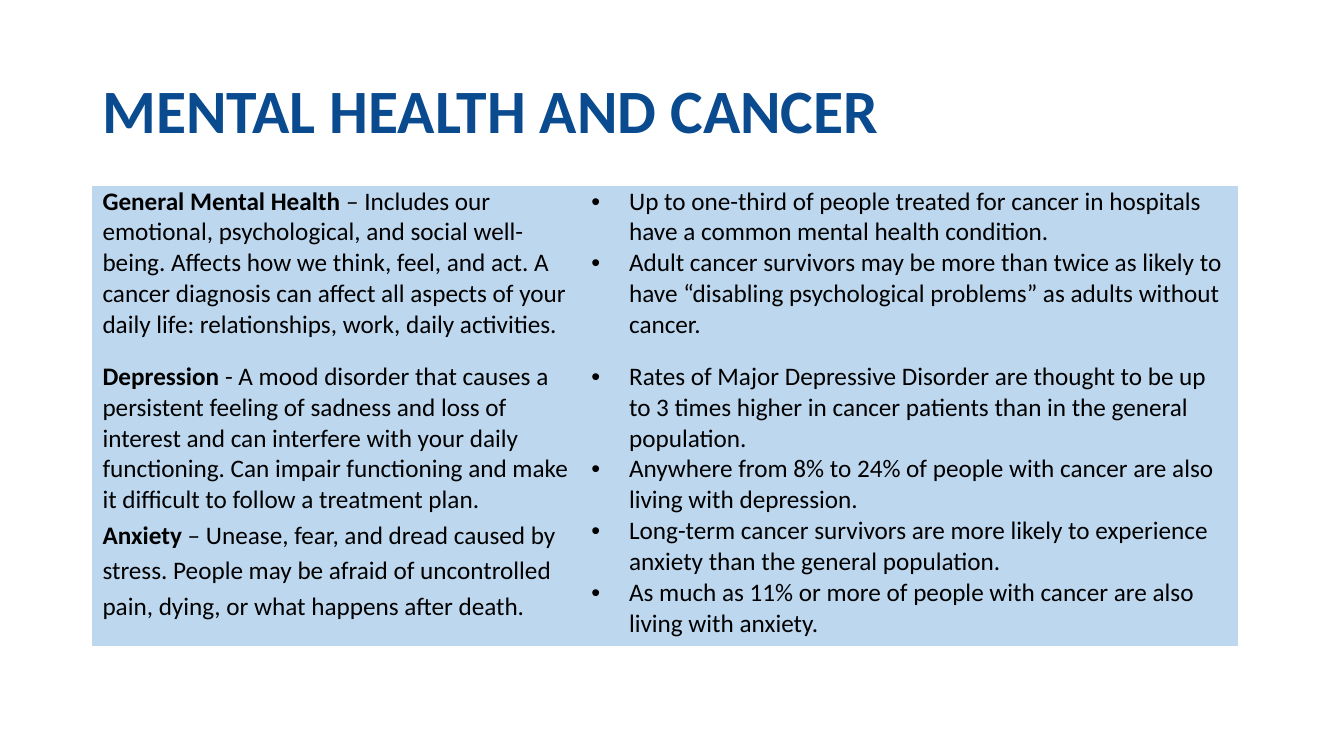
from dataclasses import dataclass

from lxml.etree import SubElement
from pptx import Presentation
from pptx.dml.color import RGBColor
from pptx.enum.text import MSO_ANCHOR, PP_ALIGN
from pptx.oxml.ns import qn
from pptx.util import Cm, Pt

TITLE = "MENTAL HEALTH AND CANCER"

# (term, definition, definition line spacing, facts)
TOPICS = [
    ("General Mental Health ",
     "– Includes our emotional, psychological, and social well-being. Affects how we "
     "think, feel, and act. A cancer diagnosis can affect all aspects of your daily life: "
     "relationships, work, daily activities.",
     1.0,
     ["Up to one-third of people treated for cancer in hospitals have a common mental "
      "health condition.",
      "Adult cancer survivors may be more than twice as likely to have “disabling "
      "psychological problems” as adults without cancer."]),
    ("Depression",
     " - A mood disorder that causes a persistent feeling of sadness and loss of interest "
     "and can interfere with your daily functioning. Can impair functioning and make it "
     "difficult to follow a treatment plan.",
     1.0,
     ["Rates of Major Depressive Disorder are thought to be up to 3 times higher in cancer "
      "patients than in the general population.",
      "Anywhere from 8% to 24% of people with cancer are also living with depression."]),
    ("Anxiety",
     " – Unease, fear, and dread caused by stress. People may be afraid of uncontrolled "
     "pain, dying, or what happens after death.",
     1.15,
     ["Long-term cancer survivors are more likely to experience anxiety than the general "
      "population.",
      "As much as 11% or more of people with cancer are also living with anxiety."]),
]


@dataclass(frozen=True)
class Theme:
    font: str = "Calibri"
    title_size: Pt = Pt(44)
    body_size: Pt = Pt(18)
    title_color: RGBColor = RGBColor(0x0A, 0x4A, 0x8E)
    text_color: RGBColor = RGBColor(0, 0, 0)
    cell_fill: RGBColor = RGBColor(0xBD, 0xD7, 0xEE)


THEME = Theme()
PLAIN_TABLE_STYLE = "{2D5ABB26-0587-4C30-8999-92F81FD0307C}"
LEFT, TITLE_TOP, TABLE_TOP = Cm(2.33), Cm(1.01), Cm(4.69)
TITLE_WIDTH, TITLE_HEIGHT = Cm(29.21), Cm(3.68)
COLUMN_WIDTHS = [Cm(12.32), Cm(16.54)]
ROW_HEIGHTS = [Cm(4.42), Cm(3.89), Cm(3.28)]
BULLET_INDENT = Cm(0.95)


def style_font(font, size, color, bold=False):
    font.name = THEME.font
    font.size = size
    font.bold = bold
    font.color.rgb = color


def add_bullet(p):
    pPr = p._p.get_or_add_pPr()
    pPr.set("marL", str(BULLET_INDENT))
    pPr.set("indent", str(-BULLET_INDENT))
    SubElement(pPr, qn("a:buFont"), typeface="Arial")
    SubElement(pPr, qn("a:buChar"), char="•")


def add_title(slide):
    title = slide.shapes.title
    title.left, title.top = LEFT, TITLE_TOP
    title.width, title.height = TITLE_WIDTH, TITLE_HEIGHT
    tf = title.text_frame
    tf.text = TITLE
    tf.vertical_anchor = MSO_ANCHOR.MIDDLE
    p = tf.paragraphs[0]
    p.alignment = PP_ALIGN.LEFT
    p.line_spacing = 0.9
    style_font(p.runs[0].font, THEME.title_size, THEME.title_color, bold=True)


def fill_definition(cell, term, definition, line_spacing):
    p = cell.text_frame.paragraphs[0]
    p.line_spacing = line_spacing
    for text, bold in ((term, True), (definition, False)):
        r = p.add_run()
        r.text = text
        style_font(r.font, THEME.body_size, THEME.text_color, bold)


def fill_facts(cell, facts):
    tf = cell.text_frame
    tf.text = "\n".join(facts)
    for p in tf.paragraphs:
        add_bullet(p)
        style_font(p.runs[0].font, THEME.body_size, THEME.text_color)


def add_topic_table(slide):
    table = slide.shapes.add_table(
        len(TOPICS), len(COLUMN_WIDTHS), LEFT, TABLE_TOP,
        sum(COLUMN_WIDTHS), sum(ROW_HEIGHTS)).table
    table.first_row = table.horz_banding = False
    table._tbl.tblPr.find(qn("a:tableStyleId")).text = PLAIN_TABLE_STYLE
    for column, width in zip(table.columns, COLUMN_WIDTHS):
        column.width = width
    for row, height, topic in zip(table.rows, ROW_HEIGHTS, TOPICS):
        row.height = height
        term, definition, line_spacing, facts = topic
        fill_definition(row.cells[0], term, definition, line_spacing)
        fill_facts(row.cells[1], facts)
    for cell in table.iter_cells():
        cell.margin_top = cell.margin_bottom = 0
        cell.fill.solid()
        cell.fill.fore_color.rgb = THEME.cell_fill


def main():
    prs = Presentation()
    prs.slide_width, prs.slide_height = Cm(33.87), Cm(19.05)
    slide = prs.slides.add_slide(prs.slide_layouts.get_by_name("Title Only"))
    add_title(slide)
    add_topic_table(slide)
    prs.save("out.pptx")


if __name__ == "__main__":
    main()
